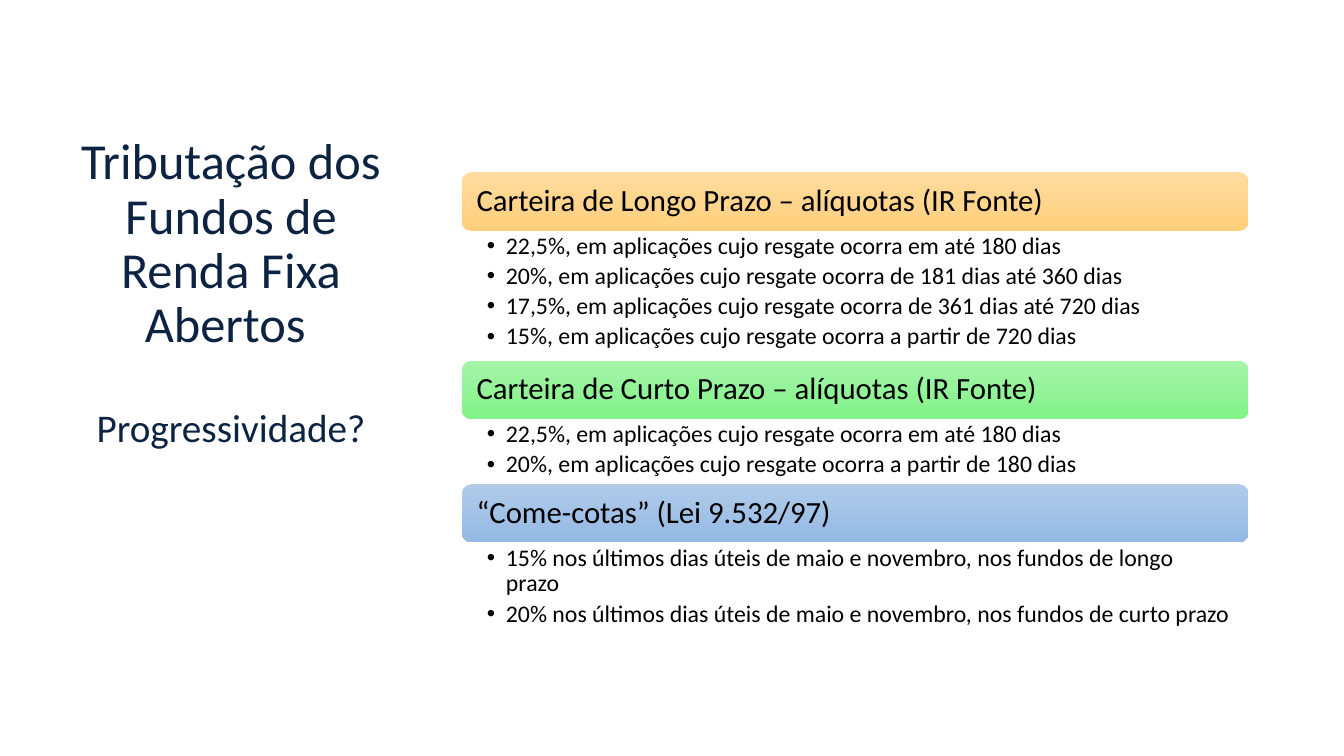
from dataclasses import dataclass

from lxml import etree
from pptx import Presentation
from pptx.dml.color import RGBColor
from pptx.enum.shapes import MSO_SHAPE
from pptx.enum.text import MSO_ANCHOR, PP_ALIGN
from pptx.oxml.ns import qn
from pptx.slide import Slide
from pptx.text.text import TextFrame, _Paragraph
from pptx.util import Cm, Pt

ROUND = MSO_SHAPE.ROUNDED_RECTANGLE
MIDDLE = MSO_ANCHOR.MIDDLE
LEFT, CENTER = PP_ALIGN.LEFT, PP_ALIGN.CENTER

FONT = "Calibri"
NAVY = RGBColor(0x0C, 0x23, 0x42)
BLACK = RGBColor(0x00, 0x00, 0x00)
SAND = RGBColor(0xFF, 0xDB, 0x9E)
AMBER = RGBColor(0xFF, 0xD0, 0x7C)
MINT = RGBColor(0xA4, 0xF4, 0xA9)
GREEN = RGBColor(0x82, 0xF3, 0x88)
SKY = RGBColor(0xB1, 0xCB, 0xE9)
BLUE = RGBColor(0x93, 0xB9, 0xE4)

# Centimetres
PANEL_LEFT, PANEL_TOP, PANEL_WIDTH = 11.64, 4.34, 19.83
BAR_HEIGHT, LINE_HEIGHT = 1.47, 0.82
INDENT = Cm(0.48)


@dataclass
class Panel:
    title: str
    light: RGBColor
    dark: RGBColor
    items: list[str]


PANELS = [
    Panel("Carteira de Longo Prazo – alíquotas (IR Fonte)", SAND, AMBER, [
        "22,5%, em aplicações cujo resgate ocorra em até 180 dias",
        "20%, em aplicações cujo resgate ocorra de 181 dias até 360 dias",
        "17,5%, em aplicações cujo resgate ocorra de 361 dias até 720 dias",
        "15%, em aplicações cujo resgate ocorra a partir de 720 dias",
    ]),
    Panel("Carteira de Curto Prazo – alíquotas (IR Fonte)", MINT, GREEN, [
        "22,5%, em aplicações cujo resgate ocorra em até 180 dias",
        "20%, em aplicações cujo resgate ocorra a partir de 180 dias",
    ]),
    Panel("“Come-cotas” (Lei 9.532/97)", SKY, BLUE, [
        "15% nos últimos dias úteis de maio e novembro, nos fundos de longo prazo",
        "20% nos últimos dias úteis de maio e novembro, nos fundos de curto prazo",
    ]),
]


def set_frame(frame: TextFrame, left: float, right: float, edge: float) -> None:
    """Turn wrapping on and set the insets in centimetres."""
    frame.word_wrap = True
    frame.margin_left, frame.margin_right = Cm(left), Cm(right)
    frame.margin_top = frame.margin_bottom = Cm(edge)


def next_para(frame: TextFrame, index: int) -> _Paragraph:
    return frame.add_paragraph() if index else frame.paragraphs[0]


def add_text(para: _Paragraph, text: str, size: int, color: RGBColor,
             align: PP_ALIGN = LEFT) -> None:
    para.alignment = align
    para.line_spacing = 0.9
    run = para.add_run()
    run.text = text
    run.font.name = FONT
    run.font.size = Pt(size)
    run.font.color.rgb = color


def add_bullet(para: _Paragraph) -> None:
    props = para._p.get_or_add_pPr()
    props.set("marL", str(INDENT))
    props.set("indent", str(-INDENT))
    etree.SubElement(props, qn("a:buFont")).set("typeface", "Arial")
    etree.SubElement(props, qn("a:buChar")).set("char", "•")


def add_title(slide: Slide) -> None:
    box = slide.shapes.add_textbox(Cm(1.78), Cm(3.3), Cm(8.08), Cm(13.97))
    frame = box.text_frame
    set_frame(frame, 0.25, 0.25, 0.13)
    add_text(next_para(frame, 0), "Tributação dos Fundos de Renda Fixa Abertos ",
             36, NAVY, CENTER)
    para = next_para(frame, 1)
    add_text(para, "Progressividade?", 28, NAVY, CENTER)
    para.space_before = Pt(39)


def add_bar(slide: Slide, panel: Panel, top: float) -> None:
    bar = slide.shapes.add_shape(ROUND, Cm(PANEL_LEFT), Cm(top),
                                 Cm(PANEL_WIDTH), Cm(BAR_HEIGHT))
    bar.shadow.inherit = False
    bar.line.fill.background()
    bar.fill.gradient()
    bar.fill.gradient_angle = 270
    for stop, color in zip(bar.fill.gradient_stops, (panel.light, panel.dark)):
        stop.color.rgb = color
    frame = bar.text_frame
    set_frame(frame, 0.3, 0.3, 0.1)
    frame.vertical_anchor = MIDDLE
    add_text(next_para(frame, 0), panel.title, 22, BLACK)


def add_list(slide: Slide, items: list[str], top: float, height: float) -> None:
    box = slide.shapes.add_textbox(Cm(PANEL_LEFT), Cm(top),
                                   Cm(PANEL_WIDTH), Cm(height))
    frame = box.text_frame
    set_frame(frame, 0.63, 0.43, 0.08)
    for index, item in enumerate(items):
        para = next_para(frame, index)
        para.space_after = Pt(3.2)
        add_text(para, item, 17, BLACK)
        add_bullet(para)


def main() -> None:
    deck = Presentation()
    deck.slide_width, deck.slide_height = Cm(33.87), Cm(19.05)
    slide = deck.slides.add_slide(deck.slide_layouts[6])
    add_title(slide)
    top = PANEL_TOP
    for panel in PANELS:
        height = LINE_HEIGHT * len(panel.items)
        add_bar(slide, panel, top)
        add_list(slide, panel.items, top + BAR_HEIGHT, height)
        top += BAR_HEIGHT + height
    deck.save("out.pptx")


if __name__ == "__main__":
    main()
